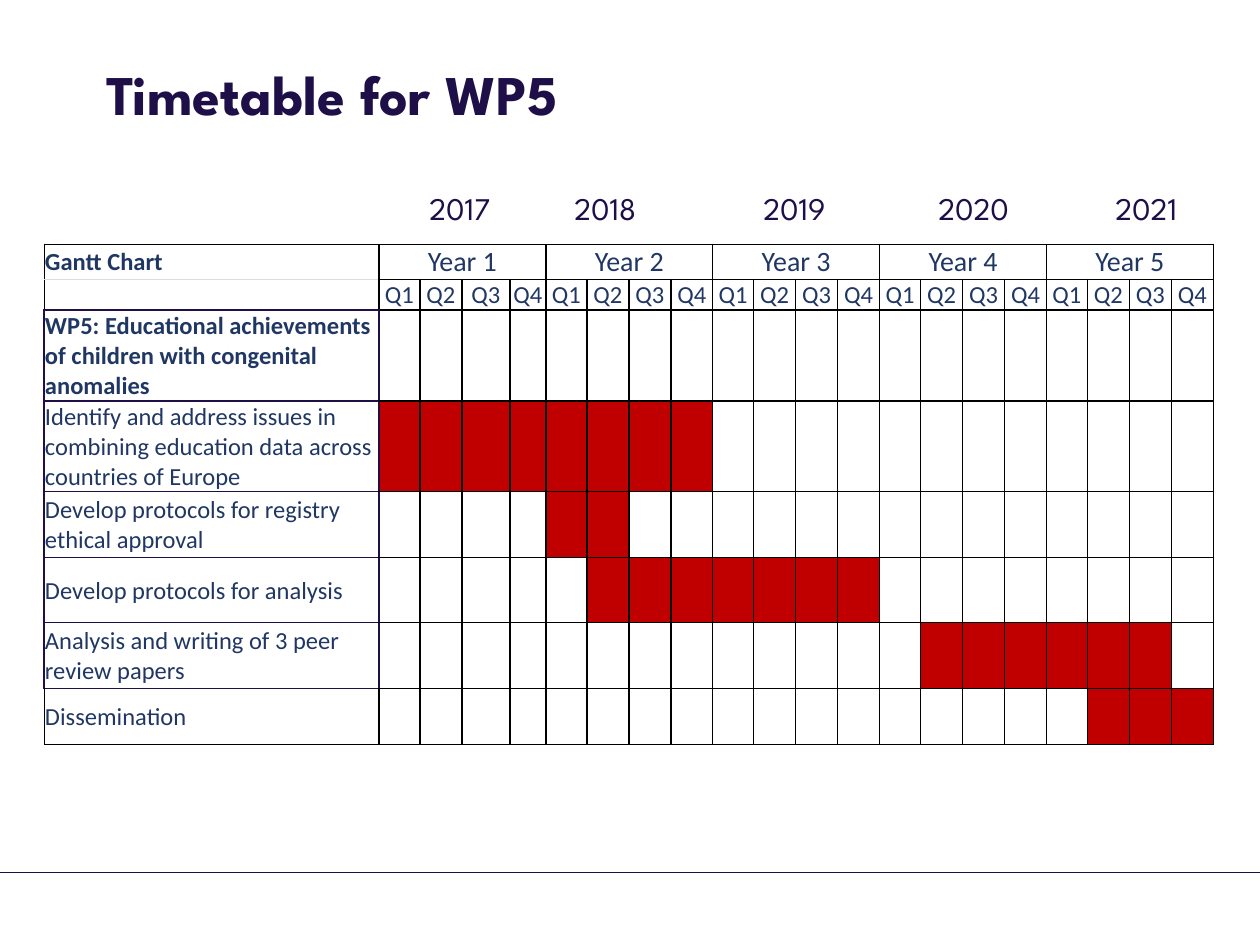
from pptx import Presentation
from pptx.dml.color import RGBColor
from pptx.enum.shapes import MSO_CONNECTOR
from pptx.enum.text import MSO_ANCHOR, PP_ALIGN
from pptx.oxml.ns import qn
from pptx.util import Pt
from lxml.etree import SubElement

SCALE = 914400 / 126
HUES = {"navy": "1E0F49", "rule": "1D0D49", "text": "203764",
        "red": "C00000", "black": "000000", "pale": "DADCDD"}
YEARS = [("2017", 417, 96), ("2018", 562, 108), ("2019", 751, 96),
         ("2020", 926, 96), ("2021", 1103, 96)]
TASKS = [
    ("WP5: Educational achievements of children with congenital anomalies", 0, 0),
    ("Identify and address issues in combining education data across countries of Europe", 1, 8),
    ("Develop protocols for registry ethical approval", 5, 6),
    ("Develop protocols for analysis", 6, 12),
    ("Analysis and writing of 3 peer review papers", 14, 19),
    ("Dissemination", 18, 20),
]
COLS = [335, 41, 42, 48, 36] + [41, 42, 42, 42] * 4
ROWS = [35, 31, 91, 90, 66, 65, 66, 56]


def px(num):
    return round(num * SCALE)


def hue(name):
    return RGBColor.from_string(HUES[name])


class Deck:
    def __init__(self):
        self.prs = Presentation()
        self.prs.slide_width, self.prs.slide_height = px(1260), px(945)
        self.slide = self.prs.slides.add_slide(self.prs.slide_layouts[5])
        self.face = "League Spartan"
        self.body = "Calibri"

    def style(self, para, face, size, color, bold=False, align=PP_ALIGN.LEFT):
        para.alignment = align
        font = para.font
        font.name, font.size, font.bold = face, Pt(size), bold
        font.color.rgb = hue(color)

    def title(self, text, x, y, w, h):
        shape = self.slide.shapes.title
        shape.left, shape.top, shape.width, shape.height = map(px, (x, y, w, h))
        frame = shape.text_frame
        frame.text = text
        frame.vertical_anchor = MSO_ANCHOR.TOP
        frame.margin_top = px(11)
        self.style(frame.paragraphs[0], self.face, 32, "navy", True)

    def label(self, text, x, y, w, h):
        frame = self.slide.shapes.add_textbox(*map(px, (x, y, w, h))).text_frame
        frame.text = text
        self.style(frame.paragraphs[0], self.face, 18, "navy")

    def line(self, x1, y1, x2, y2):
        rule = self.slide.shapes.add_connector(
            MSO_CONNECTOR.STRAIGHT, *map(px, (x1, y1, x2, y2)))
        rule.line.color.rgb = hue("rule")
        rule.line.width = Pt(0.25)
        SubElement(rule._element.spPr, qn("a:effectLst"))

    def grid(self, x, y, cols, rows):
        table = self.slide.shapes.add_table(
            len(rows), len(cols), *map(px, (x, y, sum(cols), sum(rows)))).table
        table.first_row = table.horz_banding = False
        for col, wide in zip(table.columns, cols):
            col.width = px(wide)
        for row, high in zip(table.rows, rows):
            row.height = px(high)
        return table

    def cell(self, cell, text, edges, size=14, bold=False, align=PP_ALIGN.LEFT, fill=None):
        cell.margin_left = cell.margin_right = cell.margin_top = px(1)
        cell.margin_bottom = 0
        cell.vertical_anchor = MSO_ANCHOR.MIDDLE
        para = cell.text_frame.paragraphs[0]
        if text:
            para.text = text
        self.style(para, self.body, size, "text", bold, align)
        if not text:
            SubElement(para._p, qn("a:endParaRPr"), sz=str(size * 100))
        props = cell._tc.get_or_add_tcPr()
        for side, (color, width) in zip("LRTB", edges):
            edge = SubElement(props, qn(f"a:ln{side}"), w=str(Pt(width)))
            solid = SubElement(edge, qn("a:solidFill"))
            SubElement(solid, qn("a:srgbClr"), val=HUES[color])
        if fill:
            cell.fill.solid()
            cell.fill.fore_color.rgb = hue(fill)
        else:
            cell.fill.background()


def edges(row, col):
    black, thin, navy, pale = ("black", 1), ("black", 0.5), ("navy", 1), ("pale", 1)
    last = len(ROWS) - 1
    if col == 0:
        return {0: (thin, black, thin, pale), 1: (thin, black, pale, navy),
                last: (thin, black, navy, black)}.get(row, (navy,) * 4)
    left = navy if col == 1 and 1 < row < last else black
    return left, black, thin if row == 0 else black, black


def main():
    deck = Deck()
    deck.line(0, 872, 1260, 872)
    deck.title("Timetable for WP5", 94, 48, 1041, 154)
    table = deck.grid(44, 244, COLS, ROWS)
    mid = PP_ALIGN.CENTER
    deck.cell(table.cell(0, 0), "Gantt Chart", edges(0, 0), bold=True)
    deck.cell(table.cell(1, 0), "", edges(1, 0))
    for col in range(1, len(COLS)):
        year, part = divmod(col - 1, 4)
        if part == 0:
            table.cell(0, col).merge(table.cell(0, col + 3))
        name = "" if part else f"Year {year + 1}"
        deck.cell(table.cell(0, col), name, edges(0, col), 16, align=mid)
        deck.cell(table.cell(1, col), f"Q{part + 1}", edges(1, col), align=mid)
    for row, (task, start, end) in enumerate(TASKS, 2):
        deck.cell(table.cell(row, 0), task, edges(row, 0), bold=row == 2)
        for col in range(1, len(COLS)):
            fill = "red" if start <= col <= end else None
            deck.cell(table.cell(row, col), "", edges(row, col), fill=fill)
    for year, x, w in YEARS:
        deck.label(year, x, 183, w, 50)
    deck.prs.save("out.pptx")


if __name__ == "__main__":
    main()
